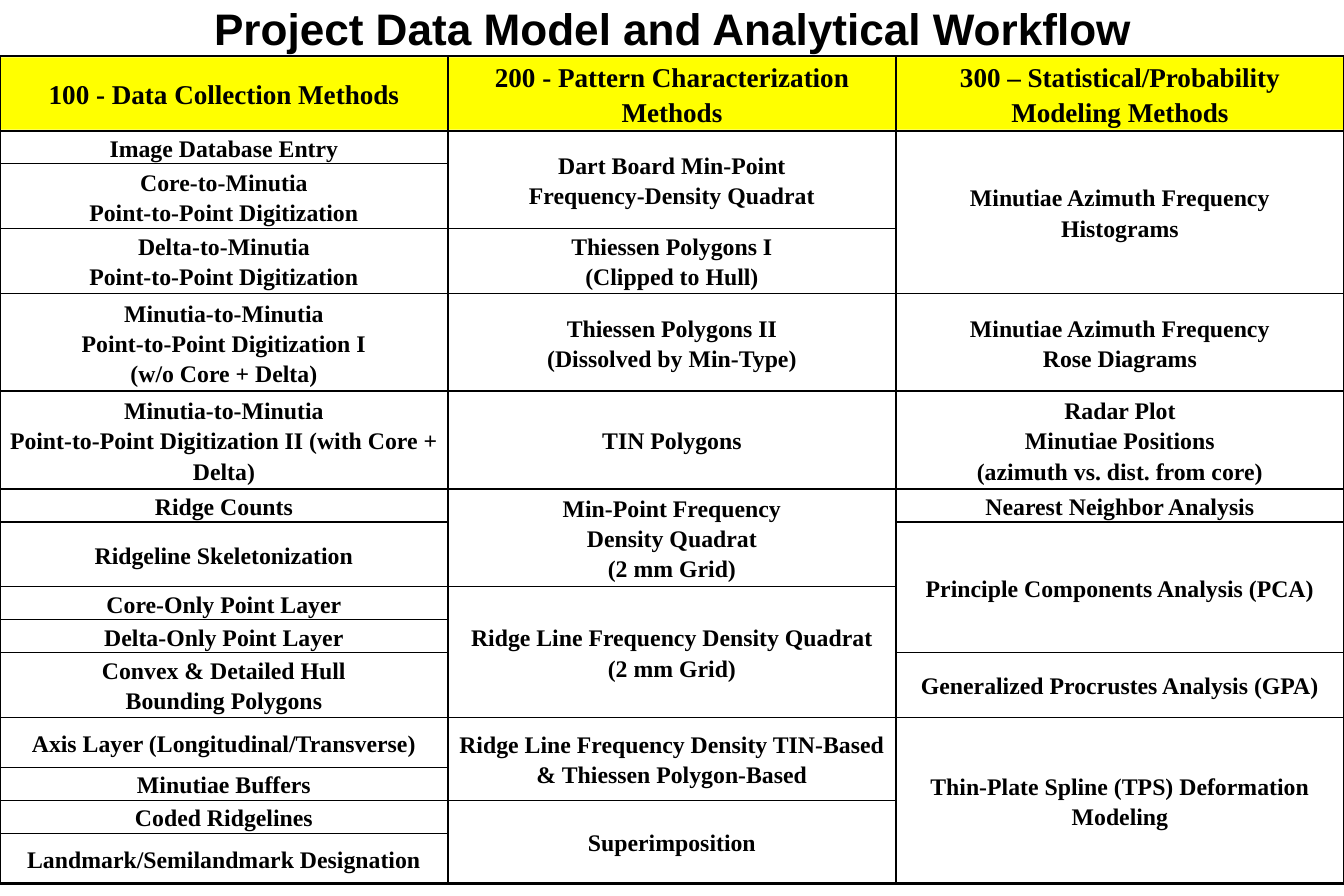
import dataclasses

import pptx
import pptx.dml.color
import pptx.enum.shapes
import pptx.enum.text
import pptx.oxml
import pptx.oxml.ns
import pptx.util

Inches = pptx.util.Inches
Pt = pptx.util.Pt
RGB = pptx.dml.color.RGBColor
Align = pptx.enum.text.PP_ALIGN
Anchor = pptx.enum.text.MSO_ANCHOR

PLAIN = "{2D5ABB26-0587-4C30-8999-92F81FD0307C}"
ROWS = [0.61, 0.27, 0.53, 0.53, 0.8, 0.8, 0.27, 0.53,
        0.27, 0.27, 0.53, 0.41, 0.27, 0.27, 0.41]
COLS = [
    [
        (1, "100 - Data Collection Methods"),
        (1, "Image Database Entry"),
        (1, "Core-to-Minutia\nPoint-to-Point Digitization"),
        (1, "Delta-to-Minutia\nPoint-to-Point Digitization"),
        (1, "Minutia-to-Minutia\nPoint-to-Point Digitization I\n(w/o Core + Delta)"),
        (1, "Minutia-to-Minutia\nPoint-to-Point Digitization II (with Core + Delta)"),
        (1, "Ridge Counts"),
        (1, "Ridgeline Skeletonization"),
        (1, "Core-Only Point Layer"),
        (1, "Delta-Only Point Layer"),
        (1, "Convex & Detailed Hull\nBounding Polygons"),
        (1, "Axis Layer (Longitudinal/Transverse)"),
        (1, "Minutiae Buffers"),
        (1, "Coded Ridgelines"),
        (1, "Landmark/Semilandmark Designation"),
    ],
    [
        (1, "200 - Pattern Characterization Methods"),
        (2, "Dart Board Min-Point\nFrequency-Density Quadrat"),
        (1, "Thiessen Polygons I\n(Clipped to Hull)"),
        (1, "Thiessen Polygons II\n(Dissolved by Min-Type)"),
        (1, "TIN Polygons"),
        (2, "Min-Point Frequency\nDensity Quadrat\n(2 mm Grid)"),
        (3, "Ridge Line Frequency Density Quadrat\n(2 mm Grid)"),
        (2, "Ridge Line Frequency Density TIN-Based & Thiessen Polygon-Based"),
        (2, "Superimposition"),
    ],
    [
        (1, "300 – Statistical/Probability Modeling Methods"),
        (3, "Minutiae Azimuth Frequency\nHistograms"),
        (1, "Minutiae Azimuth Frequency\nRose Diagrams"),
        (1, "Radar Plot\nMinutiae Positions\n(azimuth vs. dist. from core)"),
        (1, "Nearest Neighbor Analysis"),
        (3, "Principle Components Analysis (PCA)"),
        (1, "Generalized Procrustes Analysis (GPA)"),
        (4, "Thin-Plate Spline (TPS) Deformation Modeling"),
    ],
]


@dataclasses.dataclass
class Theme:
    ink: str = "000000"
    band: str = "FFFF00"
    big: int = 26
    head: int = 16
    body: int = 14
    sans: str = "Arial"
    serif: str = "Times New Roman"
    thick: float = 1.5
    thin: float = 1


def put(item, form):
    for name, value in form.items():
        setattr(item, name, value)


class Deck:
    """Holds the theme and the current slide, and draws each kind of element."""

    def __init__(self, theme):
        self.theme = theme
        self.file = pptx.Presentation()
        put(self.file, {"slide_width": Inches(11), "slide_height": Inches(7.33)})
        self.slide = self.file.slides.add_slide(self.file.slide_layouts[5])

    def style(self, frame, face, size, space):
        for para in frame.paragraphs:
            put(para, {"alignment": Align.CENTER, "line_spacing": space})
            put(para.font, {"name": face, "size": Pt(size), "bold": True})
            para.font.color.rgb = RGB.from_string(self.theme.ink)

    def title(self, text, left, top, width, height):
        shape = self.slide.shapes.title
        put(shape, {"left": Inches(left), "top": Inches(top),
                    "width": Inches(width), "height": Inches(height)})
        frame = shape.text_frame
        frame.text = text
        put(frame, {"vertical_anchor": Anchor.TOP, "word_wrap": True,
                    "auto_size": pptx.enum.text.MSO_AUTO_SIZE.NONE})
        self.style(frame, self.theme.sans, self.theme.big, 1.0)

    def band(self, left, top, width, height):
        kind = pptx.enum.shapes.MSO_SHAPE.RECTANGLE
        shape = self.slide.shapes.add_shape(
            kind, Inches(left), Inches(top), Inches(width), Inches(height))
        shape.shadow.inherit = False
        shape.fill.solid()
        shape.fill.fore_color.rgb = RGB.from_string(self.theme.band)
        shape.line.fill.background()

    def edge(self, cell, sides):
        props = cell._tc.get_or_add_tcPr()
        space = pptx.oxml.ns.nsdecls("a")
        for spot, (side, width) in enumerate(sides.items()):
            props.insert(spot, pptx.oxml.parse_xml(
                f'<a:ln{side} {space} w="{Pt(width)}"><a:solidFill>'
                f'<a:srgbClr val="{self.theme.ink}"/></a:solidFill></a:ln{side}>'))

    def table(self, cols, rows, left, top, width):
        frame = self.slide.shapes.add_table(
            len(rows), len(cols), Inches(left), Inches(top),
            Inches(width), Inches(sum(rows)))
        grid = frame.table
        put(grid, {"first_row": False, "horz_banding": False})
        grid._tbl.tblPr.find(pptx.oxml.ns.qn("a:tableStyleId")).text = PLAIN
        for row, height in zip(grid.rows, rows):
            row.height = Inches(height)
        for x, items in enumerate(cols):
            y = 0
            for span, text in items:
                self.block(grid, x, y, span, text)
                y += span

    def block(self, grid, x, y, span, text):
        theme = self.theme
        final = y + span
        cell = grid.cell(y, x)
        if span > 1:
            cell.merge(grid.cell(final - 1, x))
        cell.text = text
        self.style(cell.text_frame, theme.serif,
                   theme.body if y else theme.head, 1.15)
        right = x == len(grid.columns) - 1
        sides = {
            "L": theme.thin if x else theme.thick,
            "R": theme.thick if right else theme.thin,
            "T": theme.thick if y < 2 else theme.thin,
            "B": theme.thick if y == 0 or final == len(grid.rows) else theme.thin,
        }
        for row in range(y, final):
            part = grid.cell(row, x)
            put(part, {"margin_left": Inches(0.06), "margin_right": Inches(0.06),
                       "margin_top": 0, "margin_bottom": 0,
                       "vertical_anchor": Anchor.MIDDLE})
            part.fill.background()
            shown = "LRTB" if row == y else "LRB" if row == final - 1 else "LR"
            self.edge(part, {side: sides[side] for side in shown})


def main():
    deck = Deck(Theme())
    deck.title("Project Data Model and Analytical Workflow", 0.27, -0.04, 10.48, 0.53)
    deck.band(0, 0.47, 11, 0.59)
    deck.table(COLS, ROWS, 0, 0.46, 11)
    deck.file.save("out.pptx")


if __name__ == "__main__":
    main()
